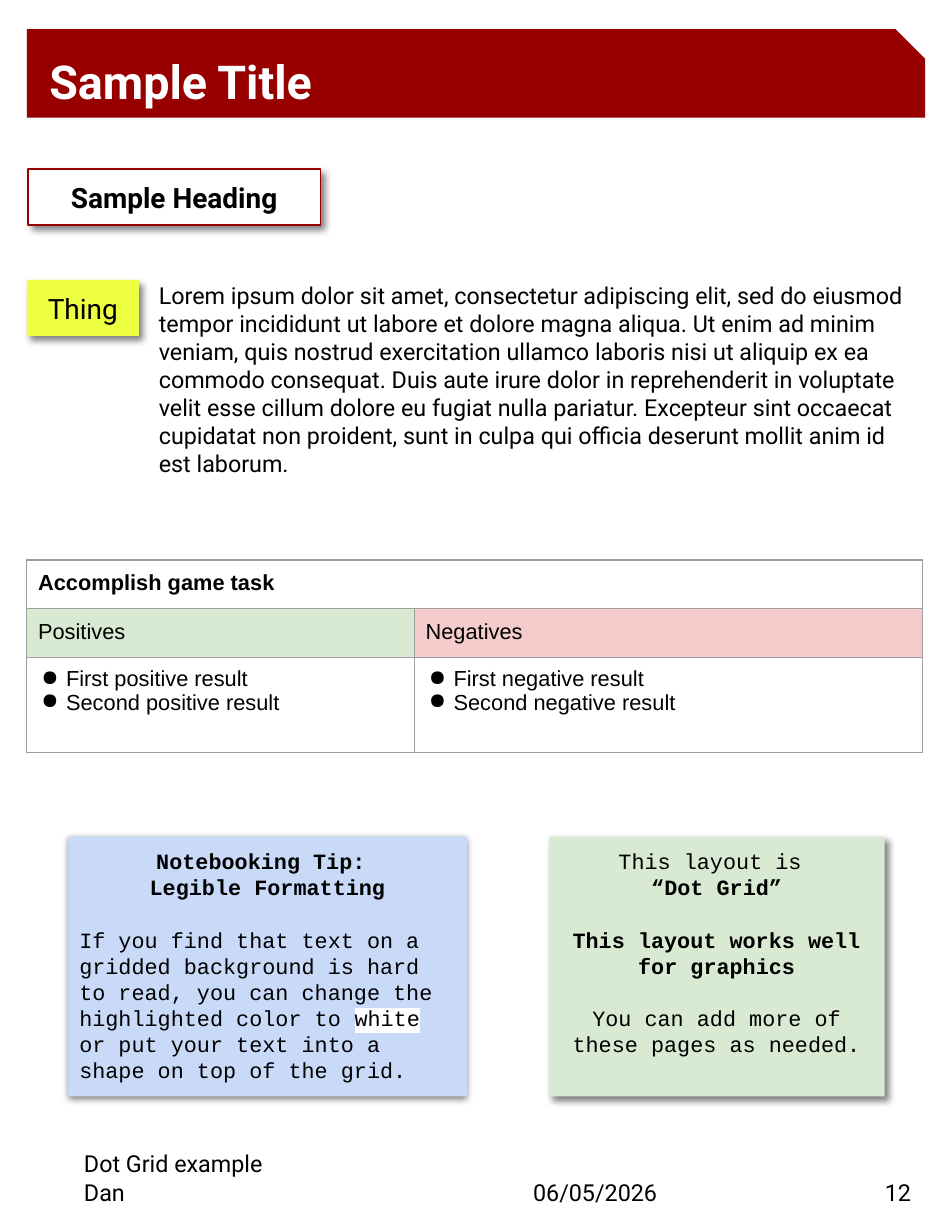
from lxml import etree
from pptx import Presentation
from pptx.dml.color import RGBColor
from pptx.enum.shapes import MSO_SHAPE as SHAPE
from pptx.enum.text import MSO_ANCHOR as ANCHOR, PP_ALIGN as ALIGN
from pptx.oxml import parse_xml
from pptx.oxml.ns import nsdecls, qn
from pptx.util import Inches, Pt

BLACK = RGBColor(0x00, 0x00, 0x00)
WHITE = RGBColor(0xFF, 0xFF, 0xFF)
RED = RGBColor(0x98, 0x00, 0x00)
YELLOW = RGBColor(0xEE, 0xFF, 0x41)
GREEN = RGBColor(0xD9, 0xEA, 0xD3)
PINK = RGBColor(0xF4, 0xCC, 0xCC)
BLUE = RGBColor(0xC9, 0xDA, 0xF8)
GREY = RGBColor(0x9E, 0x9E, 0x9E)


def add_run(p, text, size, font, color=BLACK, bold=False, highlight=None):
    r = p.add_run()
    r.text = text
    r.font.size, r.font.name, r.font.bold = Pt(size), font, bold
    r.font.color.rgb = color
    if highlight is not None:
        r.font._element.find(qn("a:latin")).addprevious(parse_xml(
            f'<a:highlight {nsdecls("a")}><a:srgbClr val="{highlight}"/></a:highlight>'))


def add_box(kind, left, top, width, height, fill, shadow=None):
    sp = slide.shapes.add_shape(kind, Inches(left), Inches(top), Inches(width), Inches(height))
    sp.shadow.inherit = False
    sp.fill.solid()
    sp.fill.fore_color.rgb = fill
    sp.line.fill.background()
    if shadow:
        distance, angle = shadow
        effects = sp._element.spPr.find(qn("a:effectLst"))
        effects.append(parse_xml(
            f'<a:outerShdw {nsdecls("a")} blurRad="{Pt(4.5)}" dist="{Pt(distance)}" '
            f'dir="{angle * 60000}" algn="bl" rotWithShape="0">'
            '<a:srgbClr val="000000"><a:alpha val="50000"/></a:srgbClr></a:outerShdw>'))
    tf = sp.text_frame
    tf.word_wrap = True
    tf.margin_left = tf.margin_right = tf.margin_top = tf.margin_bottom = Inches(0.1)
    return sp


prs = Presentation()
prs.slide_width, prs.slide_height = Inches(8.5), Inches(11)
slide = prs.slides.add_slide(prs.slide_layouts[6])

# Footer
footer = [
    ("Dot Grid example", 0.75, 10.26, 7.5),
    ("Dan", 0.75, 10.52, 3.5),
    ("06/05/2026", 4.76, 10.52, 2.75),
    ("12", 7.9, 10.52, 0.53),
]
for text, left, top, width in footer:
    tf = slide.shapes.add_textbox(Inches(left), Inches(top), Inches(width), Inches(0.25)).text_frame
    tf.word_wrap = True
    tf.margin_left = tf.margin_right = tf.margin_top = tf.margin_bottom = 0
    add_run(tf.paragraphs[0], text, 15, "Roboto")

# Title banner
sp = add_box(SHAPE.SNIP_1_RECTANGLE, 0.24, 0.26, 8.02, 0.79, RED)
sp.adjustments[0] = 0.334
tf = sp.text_frame
tf.margin_left, tf.margin_top, tf.margin_bottom = Inches(0.2), 0, 0
tf.vertical_anchor = ANCHOR.MIDDLE
tf.paragraphs[0].alignment = ALIGN.LEFT
add_run(tf.paragraphs[0], "Sample Title", 30, "Roboto", WHITE, True)

# Heading and label
heading = add_box(SHAPE.RECTANGLE, 0.25, 1.51, 2.61, 0.5, WHITE, (3.8, 46))
heading.line.color.rgb = RED
heading.line.width = Pt(0.75)
label = add_box(SHAPE.RECTANGLE, 0.24, 2.5, 1, 0.5, YELLOW, (3.8, 46))
for sp, text, bold in [(heading, "Sample Heading", True), (label, "Thing", False)]:
    tf = sp.text_frame
    tf.vertical_anchor = ANCHOR.MIDDLE
    tf.paragraphs[0].alignment = ALIGN.CENTER
    add_run(tf.paragraphs[0], text, 18, "Roboto", bold=bold)

# Body text
tf = slide.shapes.add_textbox(Inches(1.32), Inches(2.41), Inches(6.93), Inches(1.97)).text_frame
tf.word_wrap = True
tf.margin_left = tf.margin_right = tf.margin_top = tf.margin_bottom = Inches(0.1)
tf.paragraphs[0].line_spacing = Pt(18)
add_run(tf.paragraphs[0], (
    "Lorem ipsum dolor sit amet, consectetur adipiscing elit, sed do eiusmod tempor "
    "incididunt ut labore et dolore magna aliqua. Ut enim ad minim veniam, quis nostrud "
    "exercitation ullamco laboris nisi ut aliquip ex ea commodo consequat. Duis aute irure "
    "dolor in reprehenderit in voluptate velit esse cillum dolore eu fugiat nulla pariatur. "
    "Excepteur sint occaecat cupidatat non proident, sunt in culpa qui officia deserunt "
    "mollit anim id est laborum."), 15, "Roboto", highlight=WHITE)

# Table of results
rows = [
    [(["Accomplish game task"], WHITE), ([], WHITE)],
    [(["Positives"], GREEN), (["Negatives"], PINK)],
    [(["First positive result", "Second positive result"], WHITE),
     (["First negative result", "Second negative result"], WHITE)],
]
table = slide.shapes.add_table(3, 2, Inches(0.24), Inches(5), Inches(8), Inches(1.69)).table
table.first_row = table.horz_banding = False
for column, width in zip(table.columns, (3.46, 4.54)):
    column.width = Inches(width)
for row, height in zip(table.rows, (0.42, 0.42, 0.85)):
    row.height = Inches(height)
table.cell(0, 0).merge(table.cell(0, 1))
for i, row in enumerate(rows):
    for j, (lines, fill) in enumerate(row):
        cell = table.cell(i, j)
        cell.margin_left = cell.margin_right = cell.margin_top = cell.margin_bottom = Inches(0.1)
        tcPr = cell._tc.get_or_add_tcPr()
        for side in ("lnL", "lnR", "lnT", "lnB"):
            tcPr.append(parse_xml(
                f'<a:{side} {nsdecls("a")} w="{Pt(0.75)}"><a:solidFill>'
                f'<a:srgbClr val="{GREY}"/></a:solidFill></a:{side}>'))
        cell.fill.solid()
        cell.fill.fore_color.rgb = fill
        for n, text in enumerate(lines):
            tf = cell.text_frame
            p = tf.add_paragraph() if n else tf.paragraphs[0]
            if i == 2:
                pPr = p._p.get_or_add_pPr()
                pPr.set("marL", str(Inches(0.25)))
                pPr.set("indent", str(Inches(-0.22)))
                color = etree.SubElement(pPr, qn("a:buClr"))
                etree.SubElement(color, qn("a:srgbClr"), val=str(BLACK))
                etree.SubElement(pPr, qn("a:buChar"), char="●")
                p.line_spacing = 0.95
            add_run(p, text, 14, "Arial", bold=i == 0)

# Note cards: alignment, gap above, runs of (text, bold, highlight)
tip = [
    (ALIGN.CENTER, False, [("Notebooking Tip: ", True, None)]),
    (ALIGN.CENTER, False, [("Legible Formatting", True, None)]),
    (ALIGN.LEFT, True, [
        ("If you find that text on a gridded background is hard to read, "
         "you can change the highlighted color to ", False, None),
        ("white", False, WHITE),
        (" or put your text into a shape on top of the grid.", False, None)]),
]
layout_note = [
    (ALIGN.CENTER, False, [("This layout is ", False, None)]),
    (ALIGN.CENTER, False, [("“Dot Grid”", True, None)]),
    (ALIGN.CENTER, True, [("This layout works well for graphics", True, None)]),
    (ALIGN.CENTER, True, [("You can add more of these pages as needed.", False, None)]),
]
cards = [
    (4.9, 3, GREEN, (3.8, 46), layout_note),
    (0.61, 3.56, BLUE, (1.5, 90), tip),
]
for left, width, fill, shadow, paragraphs in cards:
    tf = add_box(SHAPE.RECTANGLE, left, 7.47, width, 2.32, fill, shadow).text_frame
    tf.vertical_anchor = ANCHOR.TOP
    for n, (align, gap, runs) in enumerate(paragraphs):
        p = tf.add_paragraph() if n else tf.paragraphs[0]
        p.alignment = align
        p.line_spacing = Pt(16.8)
        if gap:
            p.space_before = Pt(16.8)
        for text, bold, highlight in runs:
            add_run(p, text, 14, "Courier New", bold=bold, highlight=highlight)

prs.save("out.pptx")
